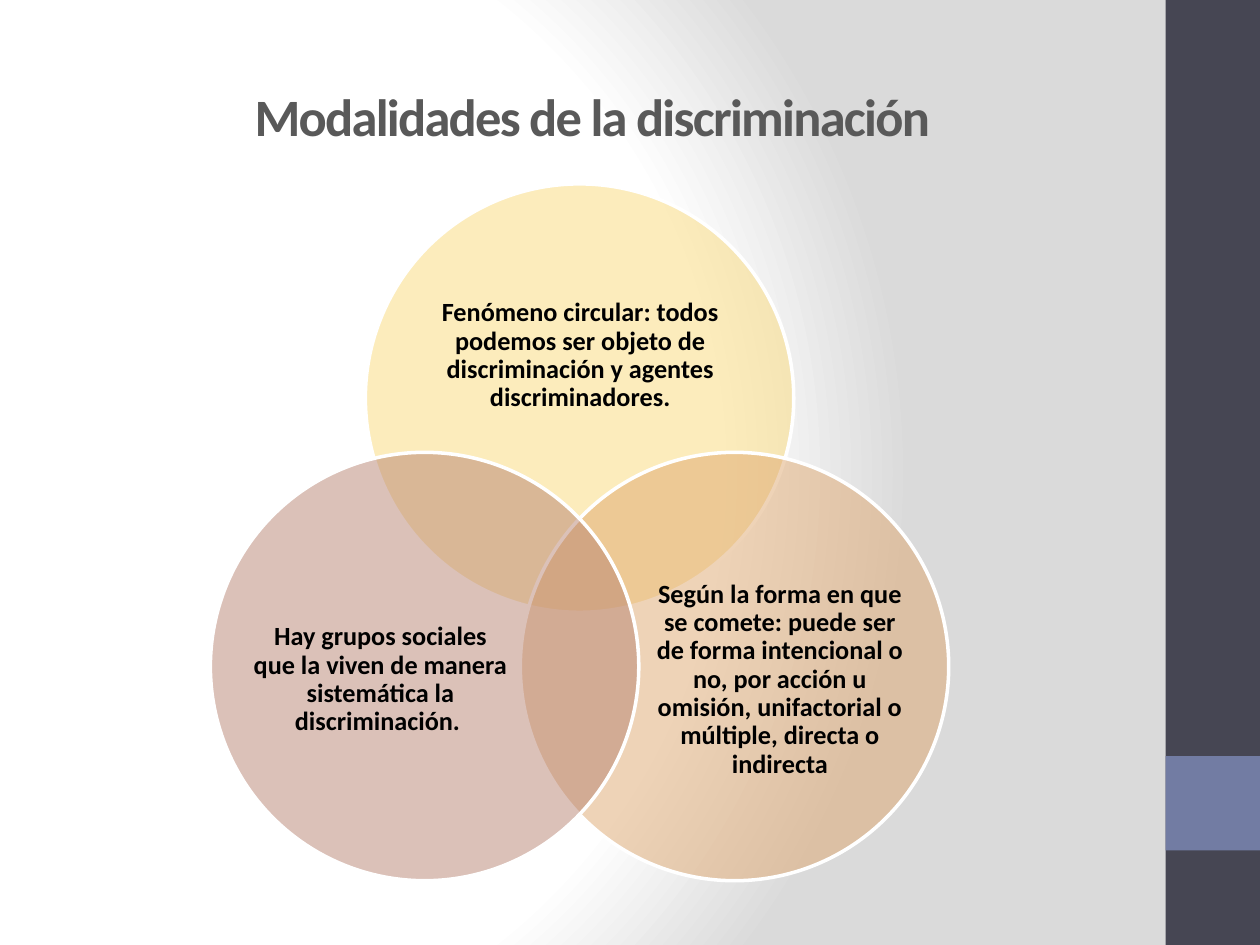
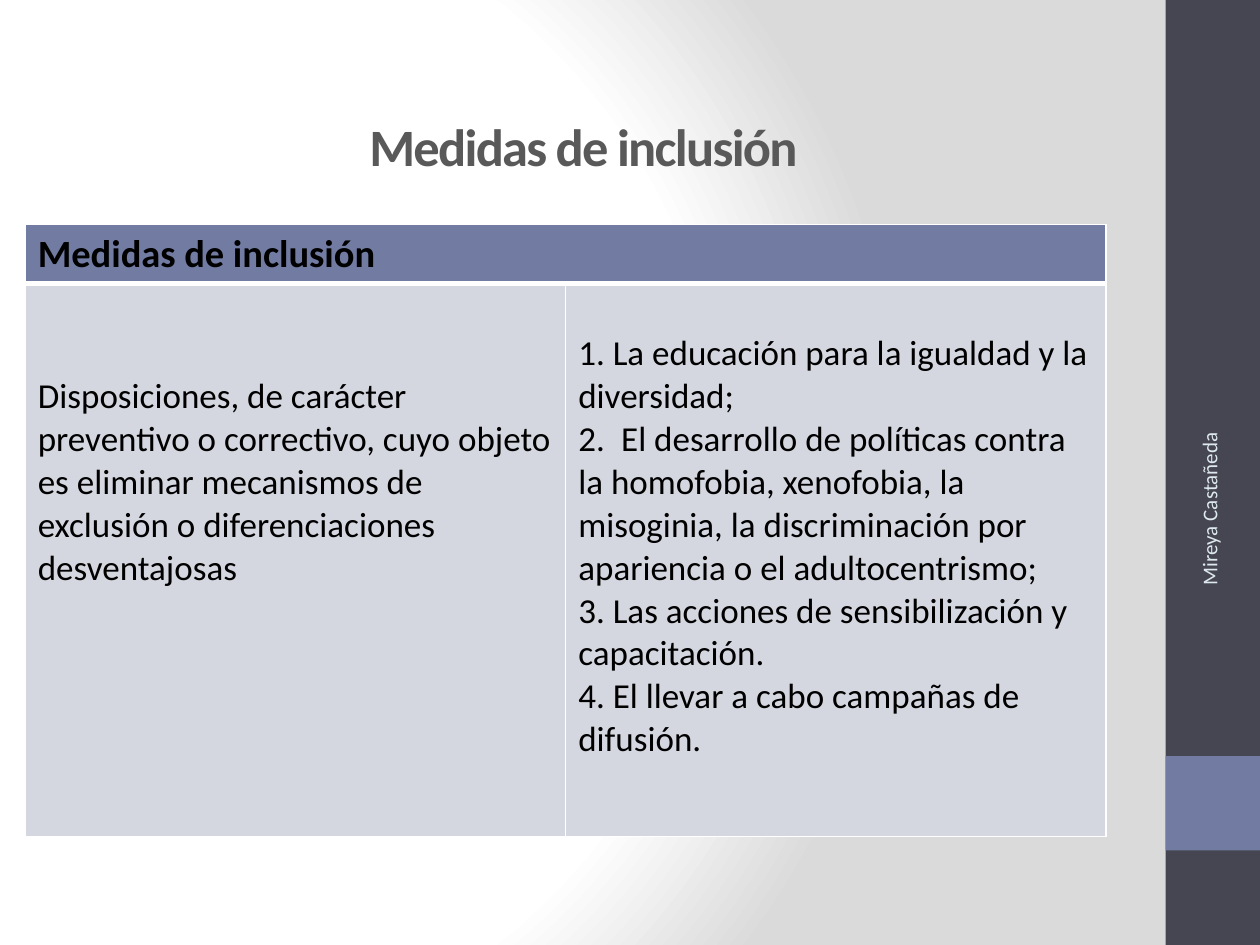
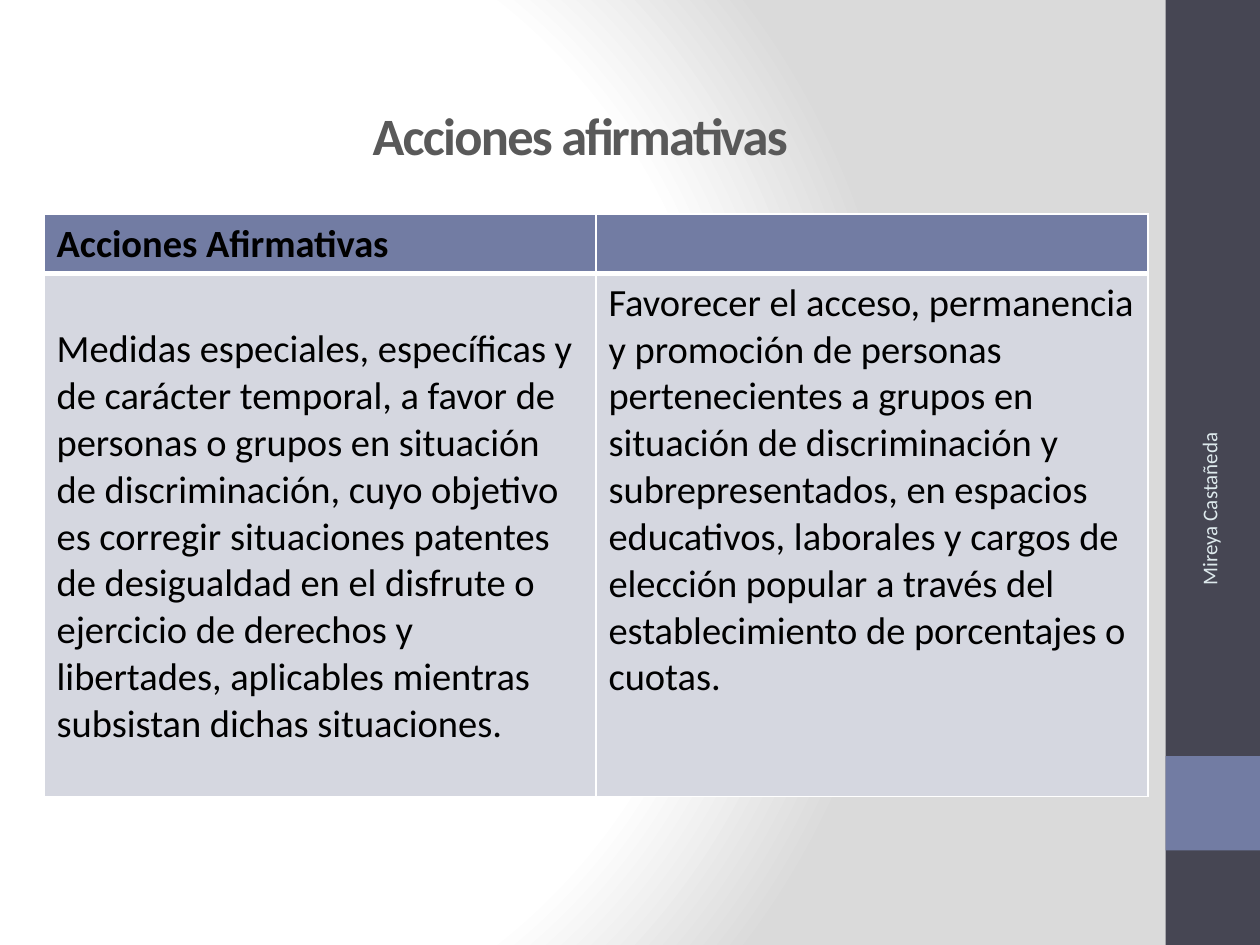
"""Build three slides on discrimination, inclusion measures and affirmative action."""
import math
from dataclasses import dataclass

from pptx import Presentation
from pptx.dml.color import RGBColor
from pptx.enum import shapes, text
from pptx.oxml import parse_xml
from pptx.oxml.ns import nsdecls
from pptx.util import Inches, Pt


@dataclass(frozen=True)
class Theme:
    """Colours, font and type sizes of the deck."""
    font: str = "Calibri"
    white: str = "FFFFFF"
    shade: str = "DADADA"
    band: str = "464653"
    accent: str = "727CA3"
    cell: str = "D5D7E0"
    title: str = "595959"
    ink: str = "000000"
    footer: str = "DDE9EC"
    title_size: int = 30
    header_size: int = 22
    venn_size: int = 15
    footer_size: int = 12


T = Theme()
AUTHOR = "Mireya Castañeda"

BANDS = [((9.25, 0, 0.75, 7.5), T.band), ((9.25, 6, 0.75, 0.75), T.accent)]

VENN = {
    "title": ("Modalidades de la discriminación", (0.2, 0.6, 9, 0.63)),
    "center": (4.6, 4.58),
    "orbit": 1.42,
    "diameter": 3.4,
    "circles": [
        ("FADA7A", (3.36, 2.06, 2.49, 1.53),
         "Fenómeno circular: todos podemos ser objeto de discriminación y agentes discriminadores."),
        ("DFA870", (5.17, 4.46, 2.04, 1.87),
         "Según la forma en que se comete: puede ser de forma intencional o no, por acción u "
         "omisión, unifactorial o múltiple, directa o indirecta"),
        ("B88472", (2, 4.46, 2.04, 1.87),
         "Hay grupos sociales que la viven de manera sistemática la discriminación. "),
    ],
}

TABLES = [
    {
        "title": ("Medidas de inclusión", (2.82, 0.85, 3.62, 0.61)),
        "at": (0.2, 1.78, 8.58),
        "rows": (0.47, 4.39),
        "size": 20,
        "header": "Medidas de inclusión",
        "merged": True,
        "body": [
            (0.73, ["Disposiciones, de carácter preventivo o correctivo, cuyo objeto es eliminar "
                    "mecanismos de exclusión o diferenciaciones desventajosas"]),
            (0.39, ["1. La educación para la igualdad y la diversidad;",
                    "2.\tEl desarrollo de políticas contra la homofobia, xenofobia, la misoginia, "
                    "la discriminación por apariencia o el adultocentrismo;",
                    "3. Las acciones de sensibilización y capacitación.",
                    "4. El llevar a cabo campañas de difusión."]),
        ],
    },
    {
        "title": ("Acciones afirmativas", (2.85, 0.76, 3.51, 0.61)),
        "at": (0.35, 1.7, 8.76),
        "rows": (0.47, 4.15),
        "size": 22,
        "header": "Acciones Afirmativas",
        "merged": False,
        "body": [
            (0.42, ["Medidas especiales, específicas y de carácter temporal, a favor de personas o "
                    "grupos en situación de discriminación, cuyo objetivo es corregir situaciones "
                    "patentes de desigualdad en el disfrute o ejercicio de derechos y libertades, "
                    "aplicables mientras subsistan dichas situaciones."]),
            (0.05, ["Favorecer el acceso, permanencia y promoción de personas pertenecientes a "
                    "grupos en situación de discriminación y subrepresentados, en espacios "
                    "educativos, laborales y cargos de elección popular a través del "
                    "establecimiento de porcentajes o cuotas."]),
        ],
    },
]


def box(at):
    """Convert a box in inches to lengths."""
    return [Inches(v) for v in at]


def rgb(color):
    """Return a colour object for a hex string."""
    return RGBColor.from_string(color)


def add_run(p, words, size, color, bold=False):
    """Add one formatted run to a paragraph."""
    r = p.add_run()
    r.text = words
    r.font.name, r.font.size, r.font.bold = T.font, Pt(size), bold
    r.font.color.rgb = rgb(color)
    return r


def add_plain(slide, kind, at, color):
    """Add a filled shape with no line and no shadow."""
    sp = slide.shapes.add_shape(kind, *box(at))
    sp.shadow.inherit = False
    sp.fill.solid()
    sp.fill.fore_color.rgb = rgb(color)
    sp.line.fill.background()
    return sp


def add_text(slide, at, words, size, color, align, bold=False):
    """Add a wrapped, middle-anchored text box."""
    sp = slide.shapes.add_textbox(*box(at))
    tf = sp.text_frame
    tf.word_wrap = True
    tf.vertical_anchor = text.MSO_ANCHOR.MIDDLE
    p = tf.paragraphs[0]
    p.alignment = align
    add_run(p, words, size, color, bold)
    return sp


def style_layout(layout, slide):
    """Give the layout its radial background and side bands."""
    layout.background.fill.solid()
    bg = layout.element.xpath(".//p:bgPr")[0]
    stops = "".join(f'<a:gs pos="{pos}000"><a:srgbClr val="{color}"/></a:gs>'
                    for pos, color in ((0, T.white), (75, T.white), (100, T.shade)))
    bg.replace(bg[0], parse_xml(
        f'<a:gradFill {nsdecls("a")} rotWithShape="1"><a:gsLst>{stops}</a:gsLst>'
        '<a:path path="circle"><a:fillToRect l="20000" t="50000" r="100000" b="50000"/>'
        '</a:path></a:gradFill>'))
    for i, (at, color) in enumerate(BANDS):
        sp = add_plain(slide, shapes.MSO_SHAPE.RECTANGLE, at, color)
        sp.element.xpath(".//p:cNvPr")[0].set("id", str(100 + i))
        layout.shapes.element.insert(2 + i, sp.element)


def set_title(slide, words, at):
    """Place and format the title placeholder."""
    sp = slide.shapes.title
    sp.left, sp.top, sp.width, sp.height = box(at)
    tf = sp.text_frame
    tf.word_wrap = False
    tf.auto_size = text.MSO_AUTO_SIZE.NONE
    tf.vertical_anchor = text.MSO_ANCHOR.MIDDLE
    p = tf.paragraphs[0]
    p.alignment = text.PP_ALIGN.CENTER
    r = add_run(p, words, T.title_size, T.title, True)
    r.font._element.set("spc", "-100")


def add_footer(slide):
    """Add the author's name, turned along the side band."""
    sp = add_text(slide, (8.3, 4.43, 2.59, 0.4), AUTHOR, T.footer_size, T.footer,
                  text.PP_ALIGN.RIGHT)
    sp.rotation = 270


def add_venn(slide, venn):
    """Draw overlapping circles evenly spaced around a centre."""
    d = venn["diameter"]
    cx, cy = venn["center"]
    for i, (color, label_at, words) in enumerate(venn["circles"]):
        angle = math.radians(-90 + i * 360 / len(venn["circles"]))
        left = cx + venn["orbit"] * math.cos(angle) - d / 2
        top = cy + venn["orbit"] * math.sin(angle) - d / 2
        sp = add_plain(slide, shapes.MSO_SHAPE.OVAL, (left, top, d, d), color)
        sp.line.color.rgb = rgb(T.white)
        sp.line.width = Pt(2)
        clr = sp.element.spPr.xpath("./a:solidFill/a:srgbClr")[0]
        clr.append(parse_xml(f'<a:alpha {nsdecls("a")} val="50000"/>'))
        tf = add_text(slide, label_at, words, T.venn_size, T.ink,
                      text.PP_ALIGN.CENTER, True).text_frame
        tf.margin_left = tf.margin_top = tf.margin_right = tf.margin_bottom = 0
        tf.paragraphs[0].line_spacing = 0.9


def style_cell(cell, color, borders):
    """Fill a cell and draw its white borders, given as side and width."""
    cell.fill.solid()
    cell.fill.fore_color.rgb = rgb(color)
    tc_pr = cell._tc.get_or_add_tcPr()
    for i, (side, width) in enumerate(borders):
        tc_pr.insert(i, parse_xml(
            f'<a:ln{side} {nsdecls("a")} w="{Pt(width)}"><a:solidFill>'
            f'<a:srgbClr val="{T.white}"/></a:solidFill></a:ln{side}>'))


def fill_cell(cell, paragraphs, size, bold=False):
    """Write paragraphs into a cell, with a tab stop where one is used."""
    tf = cell.text_frame
    for i, words in enumerate(paragraphs):
        p = tf.add_paragraph() if i else tf.paragraphs[0]
        if "\t" in words:
            p._p.get_or_add_pPr().append(parse_xml(
                f'<a:tabLst {nsdecls("a")}><a:tab pos="{Inches(0.34)}" algn="l"/></a:tabLst>'))
        add_run(p, words, size, T.ink, bold)


def add_table(slide, spec):
    """Add a header row and a row of two text cells."""
    left, top, width = spec["at"]
    n = len(spec["body"])
    table = slide.shapes.add_table(2, n, *box((left, top, width, sum(spec["rows"])))).table
    for row, height in zip(table.rows, spec["rows"]):
        row.height = Inches(height)
    for i, (margin, paragraphs) in enumerate(spec["body"]):
        table.columns[i].width = Inches(width / n)
        style_cell(table.cell(0, i), T.accent, [("L", 1), ("R", 1), ("T", 1), ("B", 3)])
        cell = table.cell(1, i)
        style_cell(cell, T.cell, [("L", 1), ("R", 1), ("T", 3), ("B", 1)])
        cell.margin_top = Inches(margin)
        fill_cell(cell, paragraphs, spec["size"])
    if spec["merged"]:
        table.cell(0, 0).merge(table.cell(0, n - 1))
    fill_cell(table.cell(0, 0), [spec["header"]], T.header_size, True)


def main():
    """Build and save the deck."""
    prs = Presentation()
    prs.slide_width, prs.slide_height = Inches(10), Inches(7.5)
    layout = prs.slide_layouts[5]

    slide = prs.slides.add_slide(layout)
    style_layout(layout, slide)
    set_title(slide, *VENN["title"])
    add_venn(slide, VENN)

    for spec in TABLES:
        slide = prs.slides.add_slide(layout)
        set_title(slide, *spec["title"])
        add_footer(slide)
        add_table(slide, spec)

    prs.save("out.pptx")


if __name__ == "__main__":
    main()
